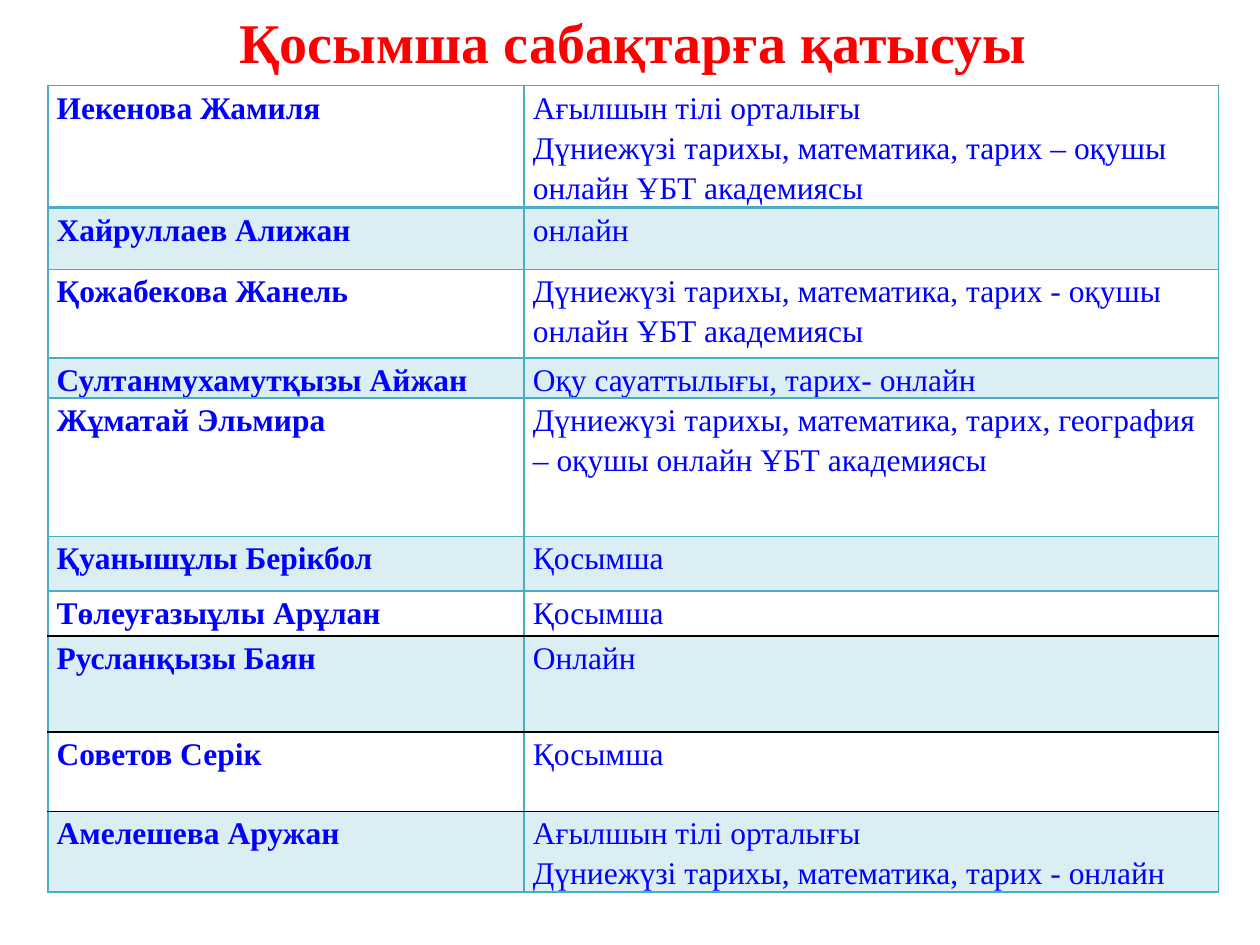
import pptx
import pptx.util
import pptx.dml.color
import pptx.enum.text
import pptx.oxml
import pptx.oxml.ns
import lxml.etree

FONT = "Times New Roman"
TEAL, BLACK, BLUE, RED = "4BACC6", "000000", "0000FF", "FF0000"
COLS = [3.78, 5.51]
ENGLISH = "Ағылшын тілі орталығы"
SUBJECTS = "Дүниежүзі тарихы, математика, тарих"
ACADEMY = "оқушы онлайн ҰБТ академиясы"
ROWS = [
    (0.97, "Иекенова Жамиля", [ENGLISH, f"{SUBJECTS} – {ACADEMY}"]),
    (0.49, "Хайруллаев Алижан", ["онлайн"]),
    (0.7, "Қожабекова Жанель", [f"{SUBJECTS} - {ACADEMY}"]),
    (0.32, "Султанмухамутқызы Айжан", ["Оқу сауаттылығы, тарих- онлайн"]),
    (1.1, "Жұматай Эльмира", [f"{SUBJECTS}, география – {ACADEMY}"]),
    (0.43, "Қуанышұлы Берікбол", ["Қосымша"]),
    (0.36, "Төлеуғазыұлы Арұлан", ["Қосымша"]),
    (0.76, "Русланқызы Баян", ["Онлайн"]),
    (0.63, "Советов Серік", ["Қосымша"]),
    (0.64, "Амелешева Аружан", [ENGLISH, f"{SUBJECTS} - онлайн"]),
]
RULES = [(TEAL, 1), (TEAL, 2)] + [(TEAL, 1)] * 5 + [(BLACK, 1)] * 3 + [(TEAL, 1)]


def rgb(value):
    """Turn a hex string into a colour."""
    return pptx.dml.color.RGBColor.from_string(value)


def style(p, size, color, bold):
    """Set the font of a whole paragraph."""
    p.font.name, p.font.size, p.font.bold = FONT, pptx.util.Pt(size), bold
    p.font.color.rgb = rgb(color)


def set_borders(cell, above, below):
    """Draw the four cell borders, before the fill in the cell properties."""
    sides = {"lnL": (TEAL, 1), "lnR": (TEAL, 1), "lnT": above, "lnB": below}
    for i, (tag, (color, width)) in enumerate(sides.items()):
        ln = pptx.oxml.parse_xml(
            f'<a:{tag} {pptx.oxml.ns.nsdecls("a")} w="{width * 12700}">'
            f'<a:solidFill><a:srgbClr val="{color}"/></a:solidFill></a:{tag}>')
        cell._tc.get_or_add_tcPr().insert(i, ln)


def set_fill(cell, banded):
    """Tint a banded cell at 20 percent and leave the others clear."""
    if not banded:
        cell.fill.background()
        return
    cell.fill.solid()
    cell.fill.fore_color.rgb = rgb(TEAL)
    color = cell._tc.tcPr.find(".//" + pptx.oxml.ns.qn("a:srgbClr"))
    lxml.etree.SubElement(color, pptx.oxml.ns.qn("a:alpha"), val="20000")


def fill_cell(cell, lines, bold):
    """Write the lines of one cell."""
    cell.margin_left = cell.margin_right = pptx.util.Inches(0.07)
    cell.margin_top = cell.margin_bottom = 0
    cell.text = "\n".join(lines)
    for p in cell.text_frame.paragraphs:
        p.line_spacing = 1.15
        style(p, 18, BLUE, bold)


def add_attendance(s, left, top):
    """Place the table of pupils and their extra lessons."""
    heights = [row[0] for row in ROWS]
    box = [pptx.util.Inches(v) for v in (left, top, sum(COLS), sum(heights))]
    table = s.shapes.add_table(len(ROWS), len(COLS), *box).table
    table.first_row = table.horz_banding = False
    for column, width in zip(table.columns, COLS):
        column.width = pptx.util.Inches(width)
    for i, (height, name, lessons) in enumerate(ROWS):
        table.rows[i].height = pptx.util.Inches(height)
        for j, lines in enumerate([[name], lessons]):
            cell = table.cell(i, j)
            fill_cell(cell, lines, j == 0)
            set_fill(cell, i % 2 == 1)
            set_borders(cell, RULES[i], RULES[i + 1])


def add_title(s, *box):
    """Place the centred heading."""
    sp = s.shapes.add_textbox(*[pptx.util.Inches(v) for v in box])
    tf = sp.text_frame
    tf.word_wrap = False
    tf.margin_top = pptx.util.Inches(0.05)
    p = tf.paragraphs[0]
    p.text = "Қосымша сабақтарға қатысуы"
    p.alignment = pptx.enum.text.PP_ALIGN.CENTER
    style(p, 32, RED, True)


def main():
    """Build and save the slide."""
    prs = pptx.Presentation()
    prs.slide_width, prs.slide_height = pptx.util.Inches(10), pptx.util.Inches(7.5)
    s = prs.slides.add_slide(prs.slide_layouts[6])
    add_attendance(s, 0.38, 0.68)
    add_title(s, 1.77, 0.01, 6.51, 0.94)
    prs.save("out.pptx")


if __name__ == "__main__":
    main()
